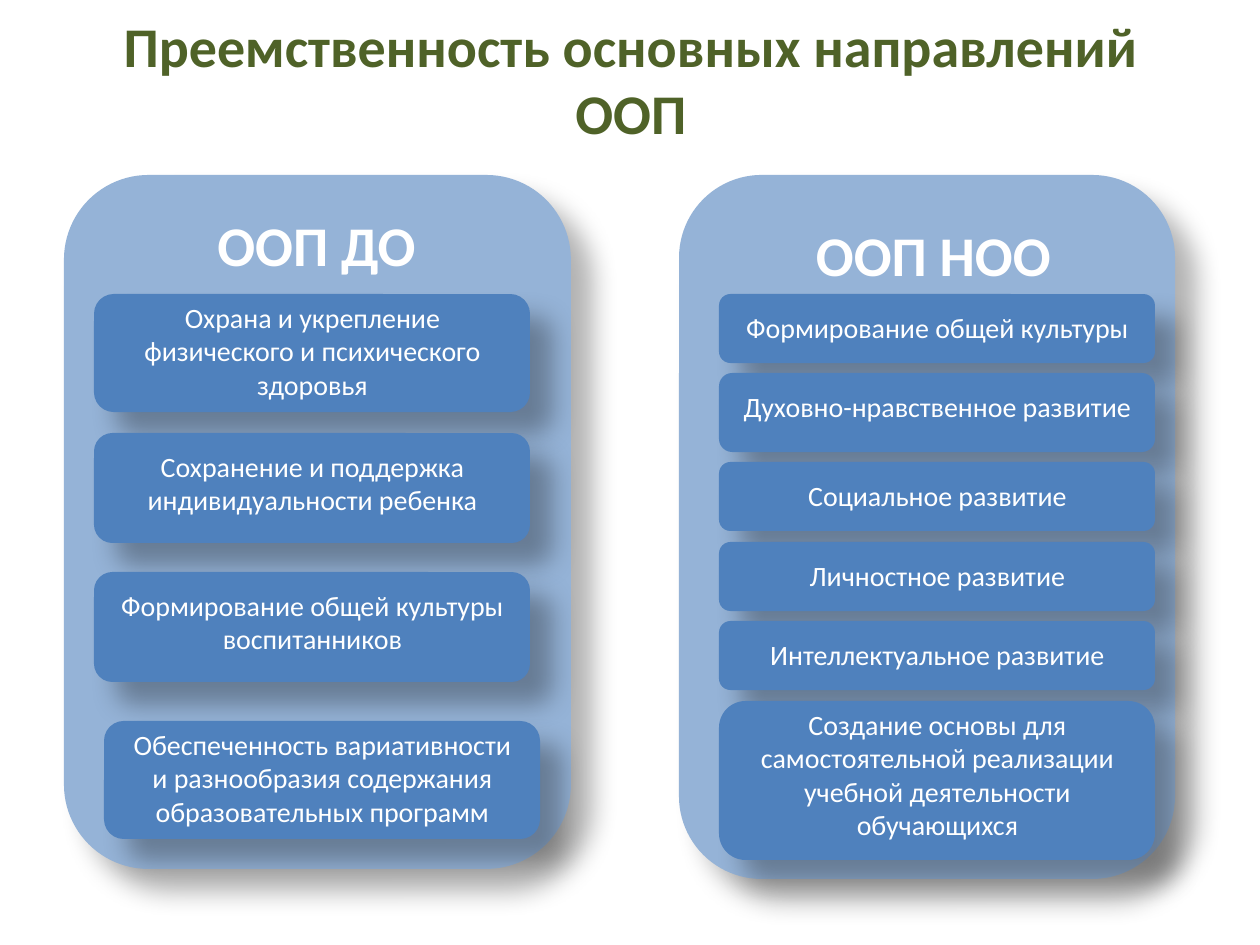
from dataclasses import dataclass

from lxml import etree
from pptx import Presentation
from pptx import util as u
from pptx.dml.color import RGBColor
from pptx.enum import shapes, text
from pptx.oxml.ns import qn

PX = u.Inches(1) / 126


@dataclass(frozen=True)
class Theme:
    font: str = "Calibri"
    title: str = "4F6228"
    panel: str = "95B3D7"
    card: str = "4F81BD"
    light: str = "FFFFFF"
    big: int = 32
    small: int = 16


THEME = Theme()

# Each card: top, height, lines of text, wording, shift to the right
PRESCHOOL = [
    (294, 118, 3, "Охрана и укрепление физического и психического здоровья", 0),
    (433, 110, 2, "Сохранение и поддержка индивидуальности ребенка", 0),
    (572, 110, 2, "Формирование общей культуры воспитанников", 0),
    (721, 118, 3, "Обеспеченность вариативности и разнообразия содержания "
                  "образовательных программ", 10),
]
PRIMARY = [
    (294, 69, 1, "Формирование общей культуры", 0),
    (373, 79, 1, "Духовно-нравственное развитие", 0),
    (462, 69, 1, "Социальное развитие", 0),
    (542, 69, 1, "Личностное развитие", 0),
    (621, 69, 1, "Интеллектуальное развитие", 0),
    (701, 159, 4, "Создание основы для самостоятельной реализации "
                  "учебной деятельности обучающихся", 0),
]


def scale(*sizes):
    return [u.Emu(round(size * PX)) for size in sizes]


def write(frame, words, size=THEME.small, color=THEME.light, bold=False):
    frame.word_wrap = True
    para = frame.paragraphs[0]
    para.alignment = text.PP_ALIGN.CENTER
    run = para.add_run()
    run.text = words
    font = run.font
    font.name, font.size, font.bold = THEME.font, u.Pt(size), bold
    font.color.rgb = RGBColor.from_string(color)


def shade(shape):
    """Give a shape a soft shadow to the lower right."""
    shape.shadow.inherit = False
    effects = shape._element.spPr.find(qn("a:effectLst"))
    outer = etree.SubElement(
        effects, qn("a:outerShdw"), blurRad=str(u.Pt(15)), dist=str(u.Pt(18)),
        dir="2700000", algn="ctr", rotWithShape="0")
    color = etree.SubElement(outer, qn("a:srgbClr"), val="000000")
    etree.SubElement(color, qn("a:alpha"), val="30000")


def plate(slide, box, fill):
    shape = slide.shapes.add_shape(
        shapes.MSO_SHAPE.ROUNDED_RECTANGLE, *scale(*box))
    shape.fill.solid()
    shape.fill.fore_color.rgb = RGBColor.from_string(fill)
    shape.line.fill.background()
    shade(shape)


def label(slide, box, words, **style):
    frame = slide.shapes.add_textbox(*scale(*box)).text_frame
    write(frame, words, **style)
    frame.auto_size = text.MSO_AUTO_SIZE.SHAPE_TO_FIT_TEXT


def title(slide, box, words):
    shape = slide.shapes.title
    shape.left, shape.top, shape.width, shape.height = scale(*box)
    shape.text_frame.vertical_anchor = text.MSO_ANCHOR.MIDDLE
    write(shape.text_frame, words, size=THEME.big, color=THEME.title, bold=True)


def column(slide, panel, head, words, left, cards):
    plate(slide, panel, THEME.panel)
    label(slide, head, words, size=THEME.big, bold=True)
    for top, height, _, _, shift in cards:
        plate(slide, (left + shift, top, 436, height), THEME.card)
    for top, _, lines, words, shift in cards:
        drop = 10 if lines < 3 else 0
        box = (left + shift + 10, top + drop, 417, 13 + 34 * lines)
        label(slide, box, words)


def main():
    deck = Presentation()
    deck.slide_width, deck.slide_height = scale(1260, 945)
    slide = deck.slides.add_slide(deck.slide_layouts[5])
    title(slide, (64, 0, 1134, 157), "Преемственность основных направлений ООП")
    column(slide, (64, 175, 507, 694), (123, 204, 387, 81), "ООП ДО",
           94, PRESCHOOL)
    column(slide, (679, 175, 496, 704), (740, 214, 387, 81), "ООП НОО",
           719, PRIMARY)
    deck.save("out.pptx")


if __name__ == "__main__":
    main()
